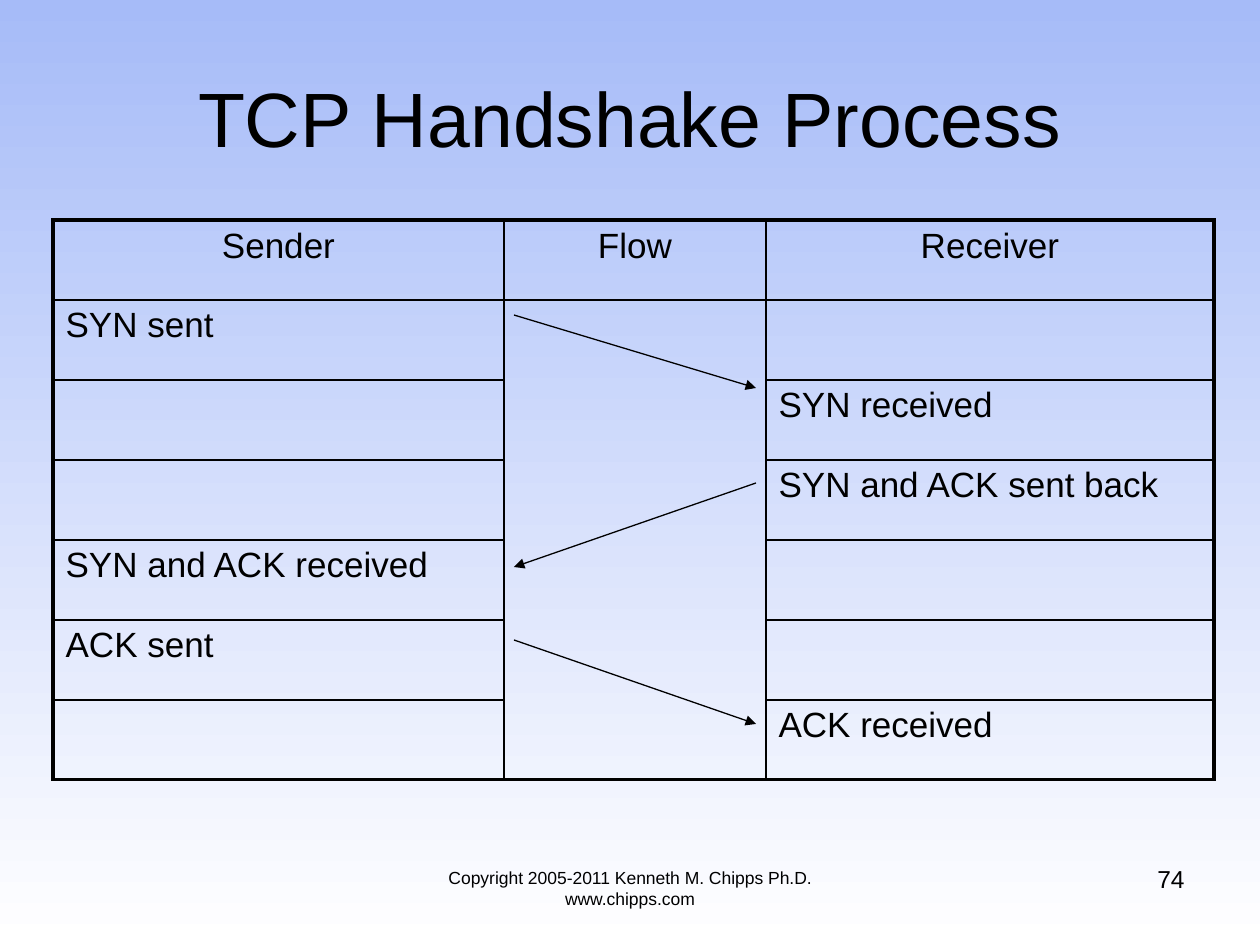
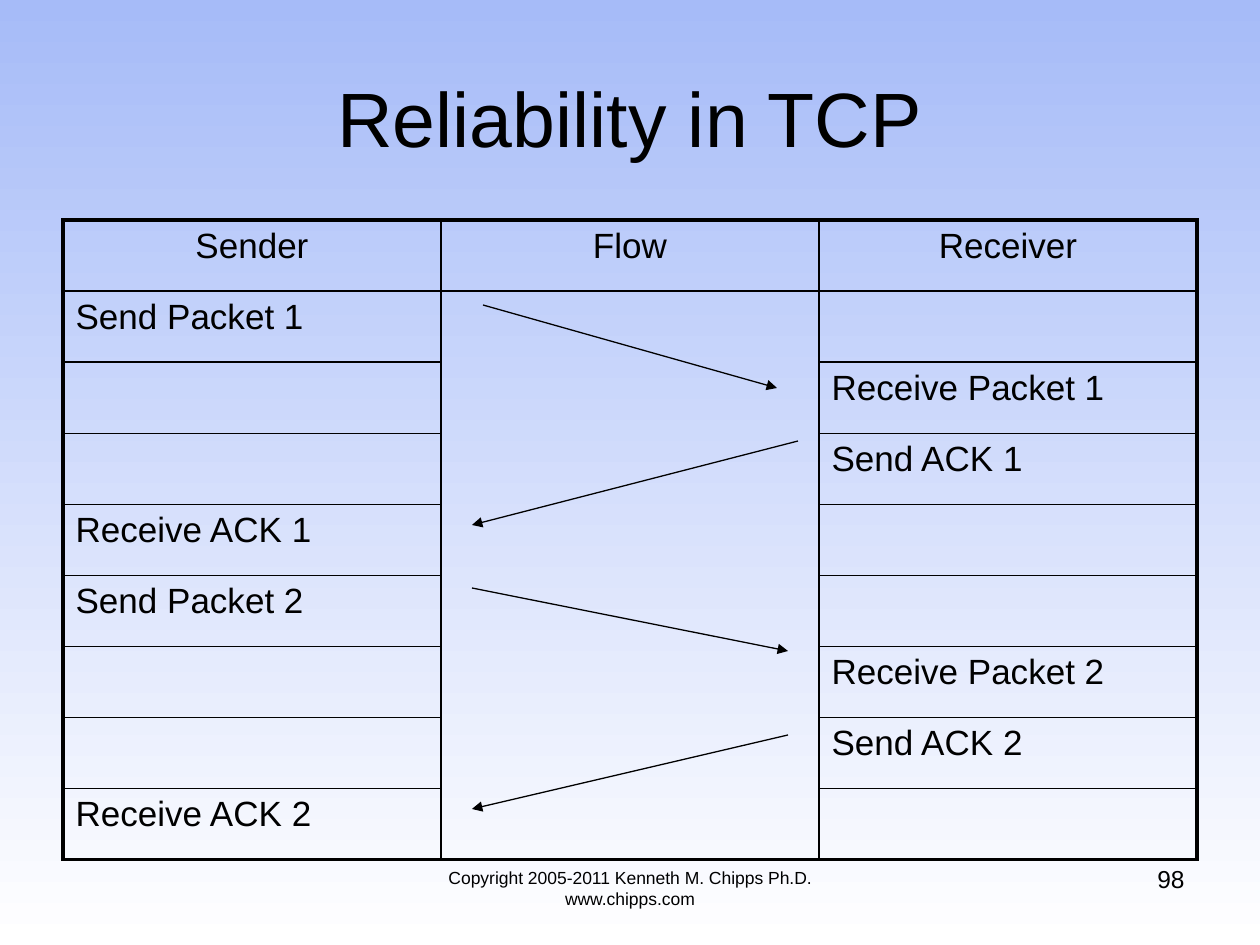
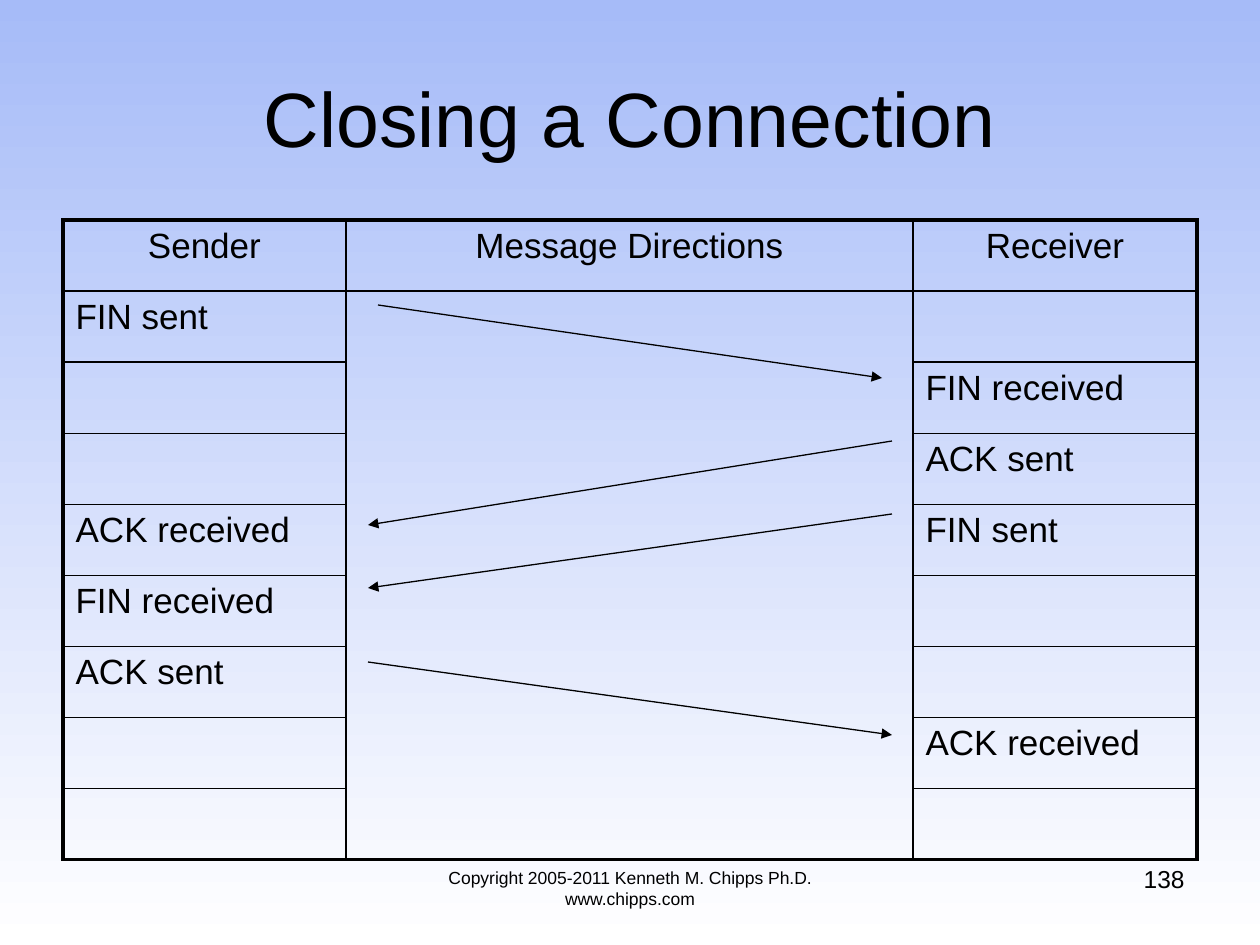
from lxml.etree import SubElement
from pptx import Presentation
from pptx.dml.color import RGBColor
from pptx.enum.shapes import MSO_CONNECTOR
from pptx.enum.text import MSO_ANCHOR, MSO_AUTO_SIZE, PP_ALIGN
from pptx.oxml import parse_xml
from pptx.oxml.ns import nsdecls, qn
from pptx.util import Emu, Pt

BLACK = RGBColor(0x00, 0x00, 0x00)
SKY = RGBColor(0xA6, 0xBB, 0xF8)
WHITE = RGBColor(0xFF, 0xFF, 0xFF)
FONT = "Arial"
FOOTER = "Copyright 2005-2011 Kenneth M. Chipps Ph.D. www.chipps.com"
TABLE_TOP = 220
OUTER_BORDER, INNER_BORDER = Pt(2.25), Pt(1)

# Each row holds the sender's step and the receiver's step;
# each arrow holds its start and end points in px
SLIDES = [
    {
        "title": "TCP Handshake Process", "number": "74",
        "left": 53, "height": 560, "columns": [451, 262, 448],
        "header": ["Sender", "Flow", "Receiver"],
        "steps": [("SYN sent", ""), ("", "SYN received"),
                  ("", "SYN and ACK sent back"), ("SYN and ACK received", ""),
                  ("ACK sent", ""), ("", "ACK received")],
        "arrows": [(514, 315, 756, 388), (756, 483, 514, 567),
                   (514, 640, 756, 724)],
    },
    {
        "title": "Reliability in TCP", "number": "98",
        "left": 63, "height": 640, "columns": [378, 378, 378],
        "header": ["Sender", "Flow", "Receiver"],
        "steps": [("Send Packet 1", ""), ("", "Receive Packet 1"),
                  ("", "Send ACK 1"), ("Receive ACK 1", ""),
                  ("Send Packet 2", ""), ("", "Receive Packet 2"),
                  ("", "Send ACK 2"), ("Receive ACK 2", "")],
        "arrows": [(483, 305, 777, 388), (798, 441, 472, 525),
                   (472, 588, 788, 651), (788, 735, 472, 809)],
    },
    {
        "title": "Closing a Connection", "number": "138",
        "left": 63, "height": 640, "columns": [283, 567, 284],
        "header": ["Sender", "Message Directions", "Receiver"],
        "steps": [("FIN sent", ""), ("", "FIN received"), ("", "ACK sent"),
                  ("ACK received", "FIN sent"), ("FIN received", ""),
                  ("ACK sent", ""), ("", "ACK received"), ("", "")],
        "arrows": [(378, 305, 882, 378), (892, 441, 368, 525),
                   (892, 514, 368, 588), (368, 662, 892, 735)],
    },
]


def px(length):
    return Emu(round(length * 914400 / 126))


def write(frame, text, size, align):
    para = frame.paragraphs[0]
    para.text = text
    para.alignment = align
    para.font.name = FONT
    para.font.size = Pt(size)
    para.font.color.rgb = BLACK


deck = Presentation()
deck.slide_width, deck.slide_height = px(1260), px(945)

# Shared background: light blue fading down to white
backdrop = deck.slide_master.background.fill
backdrop.gradient()
backdrop.gradient_angle = 270
for stop, colour in zip(backdrop.gradient_stops, (SKY, WHITE)):
    stop.color.rgb = colour

for content in SLIDES:
    page = deck.slides.add_slide(deck.slide_layouts[5])

    # Title
    title = page.shapes.title
    title.left, title.top, title.width, title.height = map(px, (63, 38, 1134, 157))
    title.text_frame.vertical_anchor = MSO_ANCHOR.MIDDLE
    title.text_frame.auto_size = MSO_AUTO_SIZE.NONE
    write(title.text_frame, content["title"], 44, PP_ALIGN.CENTER)

    # Table, with one tall cell in the middle for the arrows
    rows = [content["header"]]
    rows += [(sender, "", receiver) for sender, receiver in content["steps"]]
    last_row, last_column = len(rows) - 1, 2
    table = page.shapes.add_table(
        len(rows), 3, px(content["left"]), px(TABLE_TOP),
        px(sum(content["columns"])), px(content["height"])).table
    table.first_row = table.horz_banding = False
    for column, width in zip(table.columns, content["columns"]):
        column.width = px(width)
    table.cell(1, 1).merge(table.cell(last_row, 1))

    for r, row in enumerate(rows):
        for c, text in enumerate(row):
            cell = table.cell(r, c)
            cell.fill.background()
            write(cell.text_frame, text, 20,
                  PP_ALIGN.LEFT if r else PP_ALIGN.CENTER)

            # Cell borders, heavier around the outside
            bottom_row = r + cell.span_height - 1 if cell.is_merge_origin else r
            outer_edges = {"lnL": c == 0, "lnR": c == last_column,
                           "lnT": r == 0, "lnB": bottom_row == last_row}
            properties = cell._tc.get_or_add_tcPr()
            for place, (edge, outer) in enumerate(outer_edges.items()):
                width = OUTER_BORDER if outer else INNER_BORDER
                properties.insert(place, parse_xml(
                    f'<a:{edge} {nsdecls("a")} w="{int(width)}"><a:solidFill>'
                    f'<a:srgbClr val="{BLACK}"/></a:solidFill></a:{edge}>'))

    # Footer and page number
    for text, left, top, width, size, align in (
            (FOOTER, 378, 861, 504, 10, PP_ALIGN.CENTER),
            (content["number"], 903, 858, 294, 14, PP_ALIGN.RIGHT)):
        box = page.shapes.add_textbox(px(left), px(top), px(width), px(66))
        box.text_frame.word_wrap = True
        write(box.text_frame, text, size, align)

    # Message arrows
    for points in content["arrows"]:
        arrow = page.shapes.add_connector(MSO_CONNECTOR.STRAIGHT, *map(px, points))
        arrow.line.color.rgb = BLACK
        arrow.line.width = Pt(0.75)
        SubElement(arrow.line._get_or_add_ln(), qn("a:tailEnd"), type="triangle")
        SubElement(arrow._element.spPr, qn("a:effectLst"))

deck.save("out.pptx")
